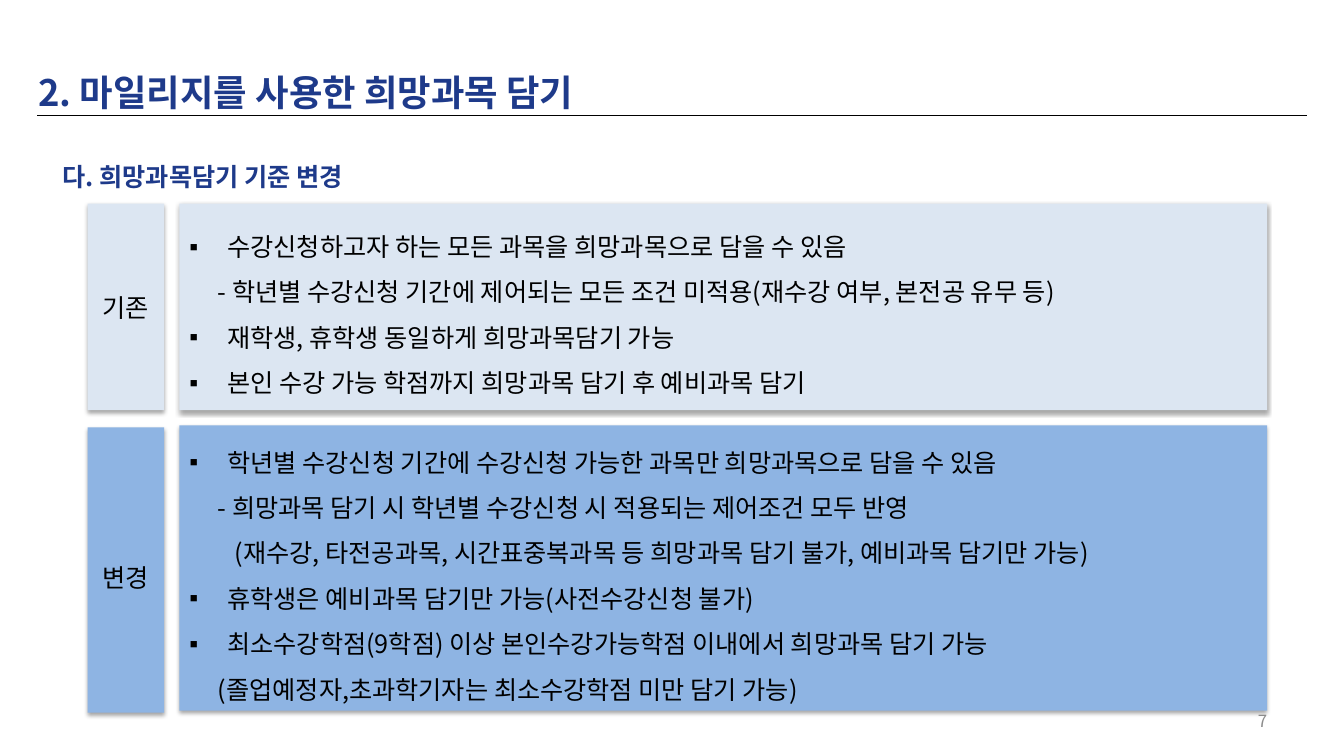
import pptx
import pptx.dml.color
import pptx.enum.shapes
import pptx.enum.text
import pptx.oxml.ns
import pptx.util
from dataclasses import dataclass
from lxml import etree

Pt = pptx.util.Pt
qn = pptx.oxml.ns.qn
Align = pptx.enum.text.PP_ALIGN
Anchor = pptx.enum.text.MSO_ANCHOR
FONT = "Noto Sans CJK KR"
NAVY, BLACK, GRAY = "1E3A8A", "000000", "8C8C8C"
HANG = 27


@dataclass
class Item:
    text: str
    mark: str = ""
    left: float = 0
    size: float = 18
    color: str = BLACK
    bold: bool = False
    align: Align = Align.LEFT
    gap: float = 1.0


@dataclass
class Band:
    tag: Item
    top: float
    tag_top: float
    height: float
    fill: str
    items: list[Item]


def point(text: str) -> Item:
    return Item(text, "▪", HANG, gap=1.5)


def sub(text: str, left: float = 20.2) -> Item:
    return Item(text, left=left, gap=1.5)


def rgb(code: str) -> pptx.dml.color.RGBColor:
    return pptx.dml.color.RGBColor.from_string(code)


def apply(target: object, values: dict) -> None:
    for key, value in values.items():
        setattr(target, key, value)


def place(shape: object, left: float, top: float, width: float, height: float) -> None:
    apply(shape, {"left": Pt(left), "top": Pt(top),
                  "width": Pt(width), "height": Pt(height)})


def write(shape: object, items: list[Item], anchor: Anchor = Anchor.MIDDLE) -> None:
    frame = shape.text_frame
    apply(frame, {"word_wrap": True, "vertical_anchor": anchor,
                  "auto_size": pptx.enum.text.MSO_AUTO_SIZE.NONE})
    for num, item in enumerate(items):
        para = frame.paragraphs[0] if num == 0 else frame.add_paragraph()
        apply(para, {"alignment": item.align, "line_spacing": item.gap,
                     "space_before": Pt(0), "space_after": Pt(0)})
        props = para._p.get_or_add_pPr()
        props.set("marL", str(int(Pt(item.left))))
        props.set("indent", str(-int(Pt(HANG)) if item.mark else 0))
        if item.mark:
            etree.SubElement(props, qn("a:buChar"), char=item.mark)
        else:
            etree.SubElement(props, qn("a:buNone"))
        run = para.add_run()
        run.text = item.text
        run.font.color.rgb = rgb(item.color)
        apply(run.font, {"size": Pt(item.size), "bold": item.bold, "name": FONT})
        etree.SubElement(run.font._element, qn("a:ea"), typeface=FONT)


def paint(shape: object, color: str) -> None:
    shape.fill.solid()
    shape.fill.fore_color.rgb = rgb(color)
    shape.line.fill.background()
    effects = etree.SubElement(shape._element.spPr, qn("a:effectLst"))
    shade = etree.SubElement(effects, qn("a:outerShdw"), blurRad=str(int(Pt(3.1))),
                             dist=str(int(Pt(1.8))), dir="5400000", rotWithShape="0")
    tint = etree.SubElement(shade, qn("a:srgbClr"), val=BLACK)
    etree.SubElement(tint, qn("a:alpha"), val="35000")


BANDS = [
    Band(Item("기존", align=Align.CENTER), 145.44, 145.44, 147.6, "DCE6F2", [
        point("수강신청하고자 하는 모든 과목을 희망과목으로 담을 수 있음"),
        sub("- 학년별 수강신청 기간에 제어되는 모든 조건 미적용(재수강 여부, 본전공 유무 등)"),
        point("재학생, 휴학생 동일하게 희망과목담기 가능"),
        point("본인 수강 가능 학점까지 희망과목 담기 후 예비과목 담기"),
    ]),
    Band(Item("변경", align=Align.CENTER, gap=1.5), 303.84, 305.28, 203.76, "8EB4E3", [
        point("학년별 수강신청 기간에 수강신청 가능한 과목만 희망과목으로 담을 수 있음"),
        sub("- 희망과목 담기 시 학년별 수강신청 시 적용되는 제어조건 모두 반영"),
        sub("(재수강, 타전공과목, 시간표중복과목 등 희망과목 담기 불가, 예비과목 담기만 가능)", 32.3),
        point("휴학생은 예비과목 담기만 가능(사전수강신청 불가)"),
        point("최소수강학점(9학점) 이상 본인수강가능학점 이내에서 희망과목 담기 가능"),
        sub("(졸업예정자,초과학기자는 최소수강학점 미만 담기 가능)"),
    ]),
]


def main() -> None:
    deck = pptx.Presentation()
    apply(deck, {"slide_width": Pt(960), "slide_height": Pt(540)})
    slide = deck.slides.add_slide(deck.slide_layouts.get_by_name("Two Content"))
    shapes = slide.shapes

    # Title and rule
    title = shapes.title
    place(title, 27.36, 48.96, 878.4, 33.84)
    apply(title.text_frame, dict.fromkeys(
        ("margin_left", "margin_top", "margin_right", "margin_bottom"), Pt(0)))
    write(title, [Item("2. 마일리지를 사용한 희망과목 담기", size=26, color=NAVY, bold=True)])
    rule = shapes.add_connector(pptx.enum.shapes.MSO_CONNECTOR.STRAIGHT,
                                Pt(26.64), Pt(82.8), Pt(933.84), Pt(82.8))
    rule.line.color.rgb = rgb(BLACK)
    rule.line.width = Pt(0.75)
    etree.SubElement(rule._element.spPr, qn("a:effectLst"))

    # Section heading
    head = shapes.add_textbox(Pt(37.44), Pt(111.6), Pt(527.04), Pt(28.8))
    write(head, [Item("다. 희망과목담기 기준 변경", color=NAVY, bold=True)], Anchor.TOP)

    # Old and new rules, each with its tag
    for num, band in enumerate(BANDS, 1):
        body = slide.placeholders[num]
        place(body, 128.16, band.top, 776.88, band.height)
        paint(body, band.fill)
        write(body, band.items)
        tag = shapes.add_shape(pptx.enum.shapes.MSO_SHAPE.RECTANGLE, Pt(62.64),
                               Pt(band.tag_top), Pt(54.72), Pt(band.height))
        paint(tag, band.fill)
        write(tag, [band.tag])

    # Page number
    page = shapes.add_textbox(Pt(688.32), Pt(500.4), Pt(223.92), Pt(28.8))
    write(page, [Item("7", size=12, color=GRAY, align=Align.RIGHT)])

    deck.save("out.pptx")


if __name__ == "__main__":
    main()
